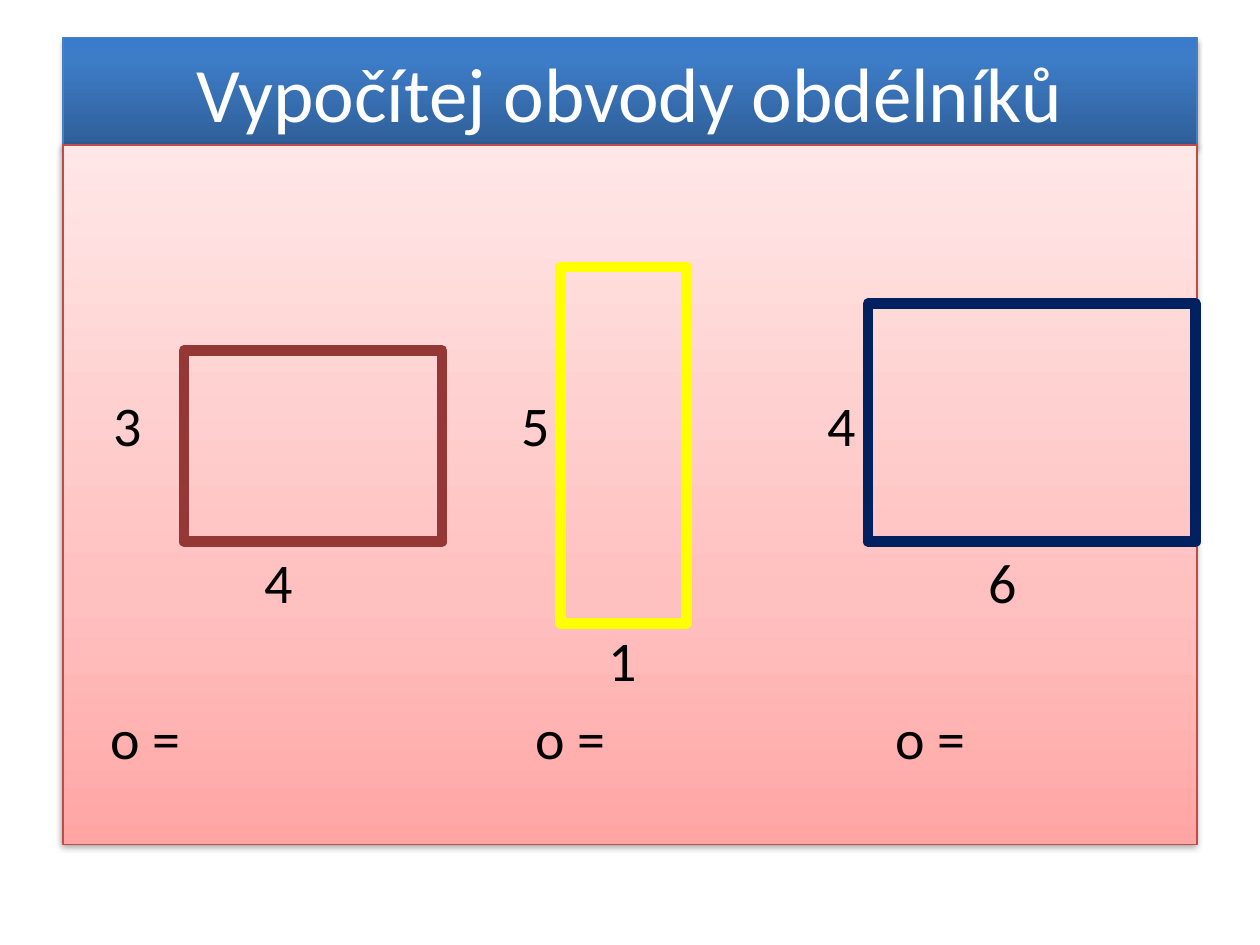
"""Builds a slide asking for the perimeters of three rectangles."""
from lxml.etree import SubElement
from pptx import Presentation
from pptx.dml.color import RGBColor
from pptx.enum.shapes import MSO_SHAPE
from pptx.enum.text import MSO_ANCHOR, PP_ALIGN
from pptx.oxml.ns import qn
from pptx.util import Inches, Pt

WHITE = RGBColor(0xFF, 0xFF, 0xFF)
BLACK = RGBColor(0, 0, 0)
BLUE = RGBColor(0x4B, 0x7E, 0xBC)
RED = RGBColor(0xBF, 0x4C, 0x48)
BROWN = RGBColor(0x95, 0x37, 0x35)
YELLOW = RGBColor(0xFF, 0xFF, 0)
NAVY = RGBColor(0, 0x20, 0x60)
BLUE_STOPS = [(0, RGBColor(0x2F, 0x5F, 0x99)), (80, RGBColor(0x3D, 0x7C, 0xC7)),
              (100, RGBColor(0x3A, 0x7C, 0xCB))]
PINK_STOPS = [(0, RGBColor(0xFF, 0xA6, 0xA5)), (35, RGBColor(0xFF, 0xC0, 0xBF)),
              (100, RGBColor(0xFF, 0xE7, 0xE7))]

TITLE = "Vypočítej obvody obdélníků"
LEFT, WIDTH, INSET = 0.5, 9, 0.1
TITLE_TOP, TITLE_HEIGHT = 0.3, 0.85
BODY_TOP, BODY_HEIGHT = 1.15, 5.55

RECTANGLES = [
    ((1.46, 2.78, 2.05, 1.52), BROWN),
    ((4.45, 2.12, 1, 2.83), YELLOW),
    ((6.89, 2.41, 2.6, 1.89), NAVY),
]
ROWS = [
    (0, [(0.9, "3"), (4.14, "5"), (6.57, "4")]),
    (51, [(2.1, "4"), (7.85, "6")]),
    (6.4, [(4.83, "1")]),
    (6.4, [(0.88, "o ="), (4.25, "o ="), (7.11, "o =")]),
]


def add_rect(s, box, color, width):
    sp = s.shapes.add_shape(MSO_SHAPE.RECTANGLE, *map(Inches, box))
    sp.shadow.inherit = False
    sp.fill.background()
    sp.line.color.rgb = color
    sp.line.width = Pt(width)
    SubElement(sp.line._get_or_add_ln(), qn("a:round"))
    return sp


def add_panel(s, box, color, stops, alpha, dist):
    sp = add_rect(s, box, color, 0.75)
    sp.fill.gradient()
    sp.fill.gradient_angle = 90
    props = sp._element.spPr
    gs_list = props.find(".//" + qn("a:gsLst"))
    for gs in list(gs_list):
        gs_list.remove(gs)
    for pos, rgb in stops:
        gs = SubElement(gs_list, qn("a:gs"), pos=str(pos * 1000))
        SubElement(gs, qn("a:srgbClr"), val=str(rgb))
    shadow = SubElement(props.find(qn("a:effectLst")), qn("a:outerShdw"),
                        blurRad=str(Pt(3.1)), dist=str(Pt(dist)),
                        dir="5400000", rotWithShape="0")
    black = SubElement(shadow, qn("a:srgbClr"), val=str(BLACK))
    SubElement(black, qn("a:alpha"), val=str(alpha * 1000))
    tf = sp.text_frame
    tf.word_wrap = True
    tf.margin_left = tf.margin_right = Inches(INSET)
    return tf


def write(p, text, size=32, color=BLACK, align=PP_ALIGN.LEFT, before=0, tabs=()):
    p.alignment = align
    p.space_before = Pt(before)
    if tabs:
        tab_list = SubElement(p._p.get_or_add_pPr(), qn("a:tabLst"))
        for x in tabs:
            SubElement(tab_list, qn("a:tab"), pos=str(Inches(x)), algn="l")
    r = p.add_run()
    r.text = text
    r.font.name = "Calibri"
    r.font.size = Pt(size)
    r.font.color.rgb = color


def main():
    prs = Presentation()
    prs.slide_width, prs.slide_height = Inches(10), Inches(7.5)
    s = prs.slides.add_slide(prs.slide_layouts[6])

    tf = add_panel(s, (LEFT, TITLE_TOP, WIDTH, TITLE_HEIGHT), BLUE, BLUE_STOPS, 35, 1.8)
    tf.vertical_anchor = MSO_ANCHOR.MIDDLE
    write(tf.paragraphs[0], TITLE, size=44, color=WHITE, align=PP_ALIGN.CENTER)

    tf = add_panel(s, (LEFT, BODY_TOP, WIDTH, BODY_HEIGHT), RED, PINK_STOPS, 38, 1.6)
    tf.vertical_anchor = MSO_ANCHOR.TOP
    tf.margin_top = Inches(1.95)
    for i, (before, labels) in enumerate(ROWS):
        p = tf.add_paragraph() if i else tf.paragraphs[0]
        write(p, "".join("\t" + text for _, text in labels), before=before,
              tabs=[x - LEFT - INSET for x, _ in labels])

    for box, color in RECTANGLES:
        add_rect(s, box, color, 6)
    prs.save("out.pptx")


if __name__ == "__main__":
    main()
